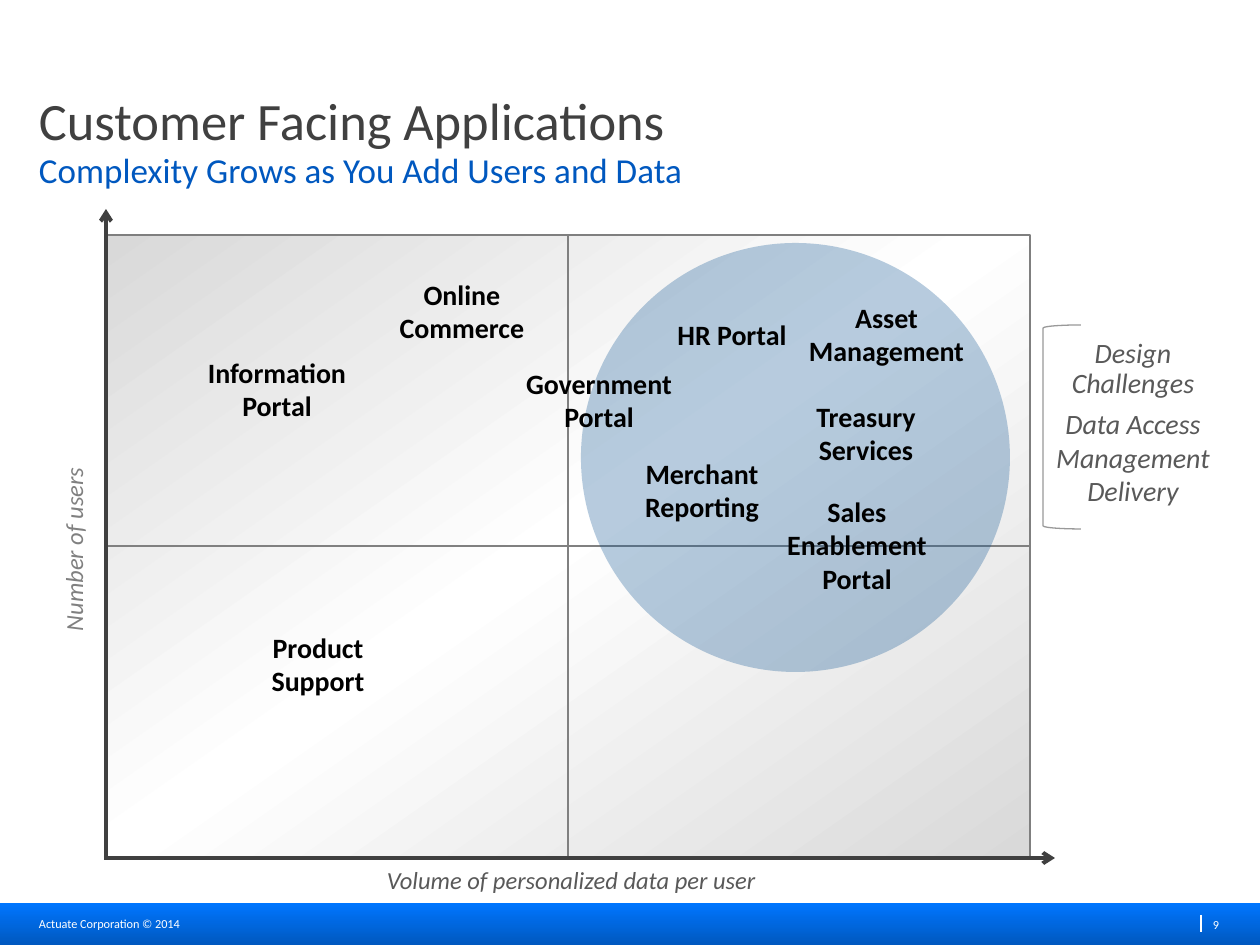
from lxml import etree
from pptx import Presentation
from pptx.dml.color import RGBColor
from pptx.enum.shapes import MSO_CONNECTOR, MSO_SHAPE
from pptx.enum.text import MSO_ANCHOR, PP_ALIGN
from pptx.oxml.ns import qn
from pptx.util import Emu, Pt

EMU_PER_PX = 914400 / 126
FONT = "Calibri"

STRAIGHT = MSO_CONNECTOR.STRAIGHT
RECT, OVAL, BRACKET = MSO_SHAPE.RECTANGLE, MSO_SHAPE.OVAL, MSO_SHAPE.LEFT_BRACKET
LEFT, CENTER, RIGHT = PP_ALIGN.LEFT, PP_ALIGN.CENTER, PP_ALIGN.RIGHT
TOP, MIDDLE, BOTTOM = MSO_ANCHOR.TOP, MSO_ANCHOR.MIDDLE, MSO_ANCHOR.BOTTOM

WHITE = RGBColor(0xFF, 0xFF, 0xFF)
BLACK = RGBColor(0x00, 0x00, 0x00)
DARK = RGBColor(0x40, 0x40, 0x40)
TEXT_GREY = RGBColor(0x59, 0x59, 0x59)
BORDER = RGBColor(0x7F, 0x7F, 0x7F)
MID_GREY = RGBColor(0x80, 0x80, 0x80)
BRACKET_GREY = RGBColor(0x99, 0x99, 0x99)
LIGHT_GREY = RGBColor(0xD9, 0xD9, 0xD9)
BRIGHT_BLUE = RGBColor(0x00, 0x76, 0xFF)
BLUE = RGBColor(0x00, 0x58, 0xBF)
CIRCLE_BLUE = RGBColor(0x11, 0x56, 0x94)

LABEL = {"size": Pt(16), "bold": True}
AXIS = {"size": Pt(14), "italic": True}
NOTE = {"size": Pt(16), "italic": True}
SMALL = {"size": Pt(7)}

# left, top, width, height, paragraphs
APPLICATIONS = [
    (789, 294, 195, 81, ["Asset Management"]),
    (324, 271, 276, 81, ["Online", "Commerce"]),
    (139, 349, 276, 81, ["Information", "Portal"]),
    (215, 624, 206, 81, ["Product Support"]),
    (564, 450, 276, 81, ["Merchant", "Reporting"]),
    (461, 360, 276, 81, ["Government", "Portal"]),
    (728, 393, 276, 81, ["Treasury", "Services"]),
    (750, 488, 214, 115, ["Sales", "Enablement Portal"]),
    (654, 311, 156, 47, ["HR Portal"]),
]


def px(value):
    return Emu(round(value * EMU_PER_PX))


def add_shape(slide, kind, box, line=None, width=0.75):
    s = slide.shapes.add_shape(kind, *map(px, box))
    s.shadow.inherit = False
    s.fill.background()
    if line is None:
        s.line.fill.background()
    else:
        s.line.color.rgb = line
        s.line.width = Pt(width)
    return s


def fill_gradient(s, stops, angle):
    """Fill with (percent, colour) stops; the angle runs clockwise."""
    s.fill.gradient()
    s.fill.gradient_angle = 360 - angle
    gs_list = s._element.spPr.find(qn("a:gradFill")).find(qn("a:gsLst"))
    for gs in list(gs_list):
        gs_list.remove(gs)
    for percent, color in stops:
        gs = etree.SubElement(gs_list, qn("a:gs"), pos=str(percent * 1000))
        etree.SubElement(gs, qn("a:srgbClr"), val=str(color))


def fill_transparent(s, color, opacity):
    s.fill.solid()
    s.fill.fore_color.rgb = color
    clr = s._element.spPr.find(qn("a:solidFill"))[0]
    etree.SubElement(clr, qn("a:alpha"), val=str(opacity * 1000))


def add_line(slide, start, end, color, width, arrow=False):
    c = slide.shapes.add_connector(STRAIGHT, *map(px, start + end))
    c.line.color.rgb = color
    c.line.width = Pt(width)
    if arrow:
        etree.SubElement(c.line._get_or_add_ln(), qn("a:tailEnd"), type="arrow")
    etree.SubElement(c._element.spPr, qn("a:effectLst"))
    return c


def add_divider(slide, matrix, begin_site, end_site):
    c = add_line(slide, (0, 0), (0, 0), MID_GREY, 1.25)
    c.begin_connect(matrix, begin_site)
    c.end_connect(matrix, end_site)


def add_text(slide, box, lines, font, color, align=CENTER, anchor=TOP,
             inset=True, spacing=None):
    s = slide.shapes.add_textbox(*map(px, box))
    tf = s.text_frame
    tf.word_wrap = True
    tf.vertical_anchor = anchor
    if not inset:
        for side in ("left", "top", "right", "bottom"):
            setattr(tf, f"margin_{side}", 0)
    for i, text in enumerate(lines):
        p = tf.paragraphs[0] if i == 0 else tf.add_paragraph()
        p.alignment = align
        if spacing:
            p.line_spacing = spacing
        r = p.add_run()
        r.text = text
        r.font.name = FONT
        r.font.color.rgb = color
        for name, value in font.items():
            setattr(r.font, name, value)
    return s


def add_footer(slide):
    band = add_shape(slide, RECT, (0, 903, 1260, 42))
    fill_gradient(band, [(0, BRIGHT_BLUE), (100, BLUE)], 90)
    add_line(slide, (1201, 915), (1201, 932), WHITE, 0.75)
    add_text(slide, (1205, 917, 14, 15), ["9"], SMALL, WHITE, RIGHT, MIDDLE, False)
    add_text(slide, (39, 917, 218, 14), ["Actuate Corporation © 2014"], SMALL,
             WHITE, LEFT, MIDDLE, False, 0.95)


def add_matrix(slide):
    matrix = add_shape(slide, RECT, (106, 235, 924, 622), BORDER, 1.25)
    fill_gradient(matrix, [(0, LIGHT_GREY), (51, WHITE), (100, LIGHT_GREY)], 235)
    add_divider(slide, matrix, 2, 0)
    add_divider(slide, matrix, 1, 3)
    circle = add_shape(slide, OVAL, (581, 243, 429, 429))
    fill_transparent(circle, CIRCLE_BLUE, 30)


def add_axes(slide):
    add_line(slide, (104, 858), (1055, 858), DARK, 2.25, arrow=True)
    add_line(slide, (106, 858), (106, 209), DARK, 2.25, arrow=True)
    users = add_text(slide, (-233, 528, 614, 43), ["Number of users"], AXIS, MID_GREY)
    users.rotation = 270
    add_text(slide, (113, 859, 917, 44), ["Volume of personalized data per user"],
             AXIS, TEXT_GREY)


def add_challenges(slide):
    s = add_text(slide, (1028, 333, 210, 183),
                 ["Design", "Challenges", "Data Access", "Management", "Delivery"],
                 NOTE, TEXT_GREY)
    paragraphs = s.text_frame.paragraphs
    for p in paragraphs[:3]:
        p.line_spacing = 0.9
    paragraphs[2].space_before = Pt(6)
    add_shape(slide, BRACKET, (1043, 325, 38, 204), BRACKET_GREY)


def main():
    prs = Presentation()
    prs.slide_width, prs.slide_height = px(1260), px(945)
    slide = prs.slides.add_slide(prs.slide_layouts[6])
    add_footer(slide)
    add_matrix(slide)
    add_text(slide, (39, 26, 1182, 125), ["Customer Facing Applications"],
             {"size": Pt(30)}, DARK, LEFT, BOTTOM, False, 0.8)
    add_text(slide, (39, 152, 1182, 55), ["Complexity Grows as You Add Users and Data"],
             {"size": Pt(20)}, BLUE, LEFT, TOP, False, 0.95)
    add_challenges(slide)
    add_axes(slide)
    for *box, lines in APPLICATIONS:
        add_text(slide, box, lines, LABEL, BLACK)
    prs.save("out.pptx")


if __name__ == "__main__":
    main()
